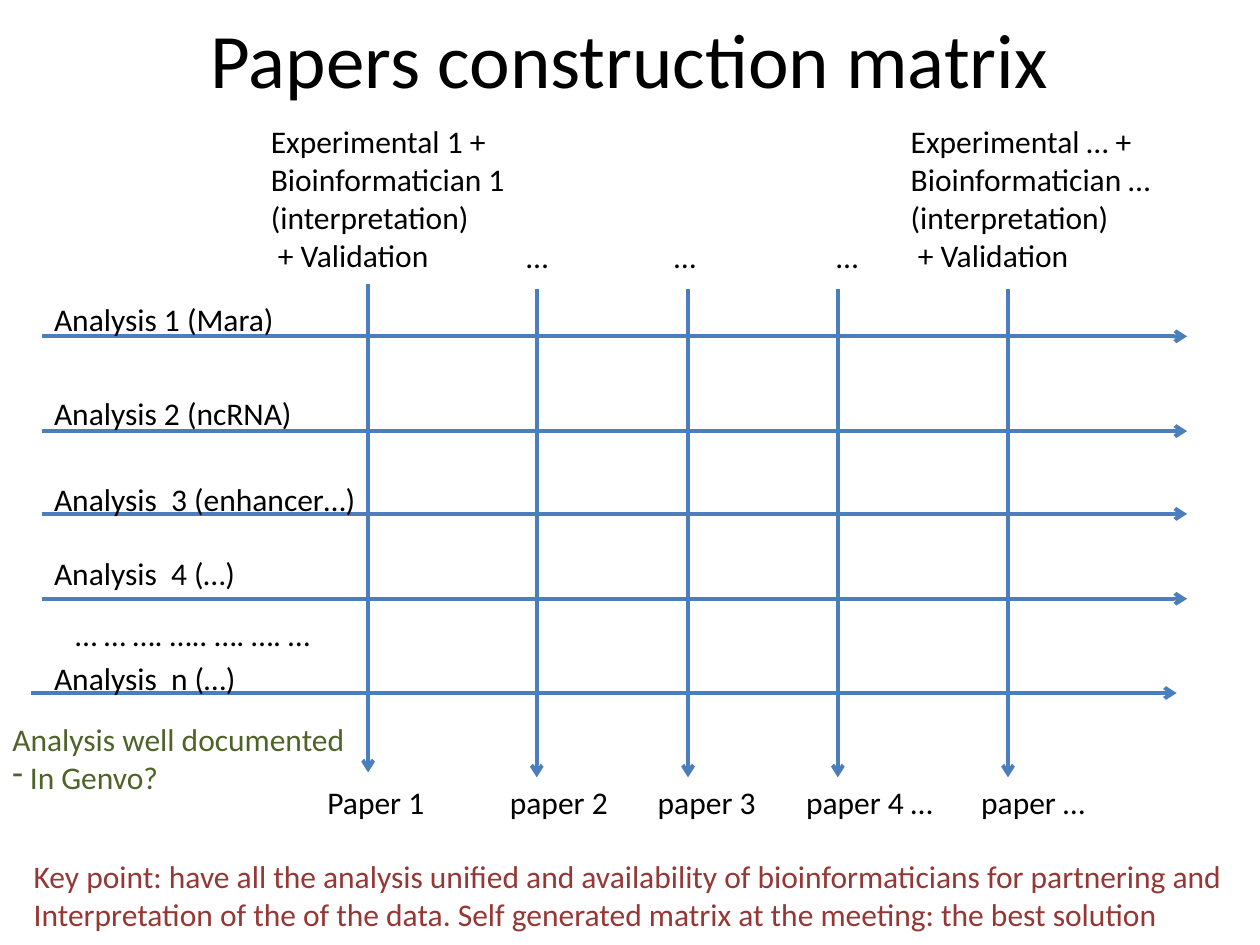
from lxml import etree
from pptx import Presentation
from pptx.dml.color import RGBColor
from pptx.enum.shapes import MSO_CONNECTOR
from pptx.enum.text import MSO_ANCHOR, PP_ALIGN
from pptx.oxml.ns import qn
from pptx.util import Cm, Pt

STRAIGHT = MSO_CONNECTOR.STRAIGHT
MIDDLE = MSO_ANCHOR.MIDDLE
CENTER = PP_ALIGN.CENTER

FONT = "Calibri"
COLORS = {"text": "000000", "arrow": "4B7EBC", "key": "953735", "note": "4F6228"}
LINE_HEIGHT = 0.76
PADDING = 0.25


def add_text(slide, box, lines, color="text", size=18):
    frame = slide.shapes.add_textbox(*map(Cm, box)).text_frame
    frame.word_wrap = False
    frame.text = "\n".join(lines)
    for paragraph in frame.paragraphs:
        for run in paragraph.runs:
            run.font.name = FONT
            run.font.size = Pt(size)
            run.font.color.rgb = RGBColor.from_string(COLORS[color])
    return frame


def add_label(slide, left, top, width, lines, color="text"):
    height = len(lines) * LINE_HEIGHT + PADDING
    return add_text(slide, (left, top, width, height), lines, color)


def add_arrow(slide, start, end):
    arrow = slide.shapes.add_connector(STRAIGHT, *map(Cm, start + end))
    arrow.line.color.rgb = RGBColor.from_string(COLORS["arrow"])
    arrow.line.width = Pt(2.25)
    etree.SubElement(arrow.line._get_or_add_ln(), qn("a:tailEnd"), type="arrow")
    etree.SubElement(arrow._element.spPr, qn("a:effectLst"))


def add_title(slide, box):
    frame = add_text(slide, box, ["Papers construction matrix"], size=44)
    frame.word_wrap = True
    frame.vertical_anchor = MIDDLE
    frame.paragraphs[0].alignment = CENTER


def add_grid(slide, box):
    left, top, width, height = box
    rows = [(0, 0.96), (0, 2.87), (0, 4.54), (0, 6.25), (-0.21, 8.15)]
    columns = [(6.58, -0.1), (9.98, 0), (13.03, 0), (16.05, 0), (19.48, 0)]
    for dx, dy in rows:
        add_arrow(slide, (left + dx, top + dy), (left + dx + width, top + dy))
    for dx, dy in columns:
        add_arrow(slide, (left + dx, top + dy), (left + dx, top + dy + height))


def add_analyses(slide, box):
    left, top, width, _ = box
    analyses = [
        ("Analysis 1 (Mara)", 0, 0),
        ("Analysis 2 (ncRNA)", 0, 1.9),
        ("Analysis  3 (enhancer…)", 0, 3.63),
        ("Analysis  4 (…)", 0, 5.13),
        ("Analysis  n (…)", 0, 7.24),
        ("… … …. ….. …. …. …", 0.43, 6.35),
    ]
    for analysis, dx, dy in analyses:
        add_label(slide, left + dx, top + dy, width, [analysis])


def add_teams(slide, box):
    left, top, width, _ = box
    for number, dx in (("1", 0), ("…", 12.9)):
        team = [f"Experimental {number} +", f"Bioinformatician {number}",
                "(interpretation)", " + Validation"]
        add_label(slide, left + dx, top, width, team)
    for dx in (5.15, 8.13, 11.4):
        add_label(slide, left + dx, top + 2.31, 0.97, ["…"])


def add_papers(slide, box):
    left, top, width, _ = box
    papers = ["Paper 1", "paper 2", "paper 3", "paper 4 …", "paper …"]
    frame = add_label(slide, left, top, width, ["\t".join(papers)])
    properties = frame.paragraphs[0]._p.get_or_add_pPr()
    stops = etree.SubElement(properties, qn("a:tabLst"))
    for stop in (3.68, 6.66, 9.65, 13.18):
        etree.SubElement(stops, qn("a:tab"), pos=str(Cm(stop)), algn="l")


def add_key_point(slide, box):
    left, top, width, _ = box
    add_label(slide, left, top, width, [
        "Key point: have all the analysis unified and availability of bioinformaticians for partnering and",
        "Interpretation of the of the data. Self generated matrix at the meeting: the best solution",
    ], "key")


def add_documentation_note(slide, box):
    left, top, width, _ = box
    frame = add_label(slide, left, top, width,
                      ["Analysis well documented", " In Genvo?"], "note")
    properties = frame.paragraphs[1]._p.get_or_add_pPr()
    etree.SubElement(properties, qn("a:buFontTx"))
    etree.SubElement(properties, qn("a:buChar"), char="-")


def main():
    presentation = Presentation()
    presentation.slide_width = Cm(25.4)
    presentation.slide_height = Cm(19.05)
    slide = presentation.slides.add_slide(presentation.slide_layouts[6])
    add_title(slide, (1.27, -0.43, 22.86, 3.18))
    add_grid(slide, (0.84, 5.82, 23.09, 9.85))
    add_analyses(slide, (0.84, 5.92, 6.63, 8.25))
    add_teams(slide, (5.21, 2.34, 5.44, 3.33))
    add_papers(slide, (6.35, 15.67, 15.93, 1.02))
    add_key_point(slide, (0.43, 17.15, 24.61, 1.8))
    add_documentation_note(slide, (0, 14.4, 7.29, 1.8))
    presentation.save("out.pptx")


if __name__ == "__main__":
    main()
